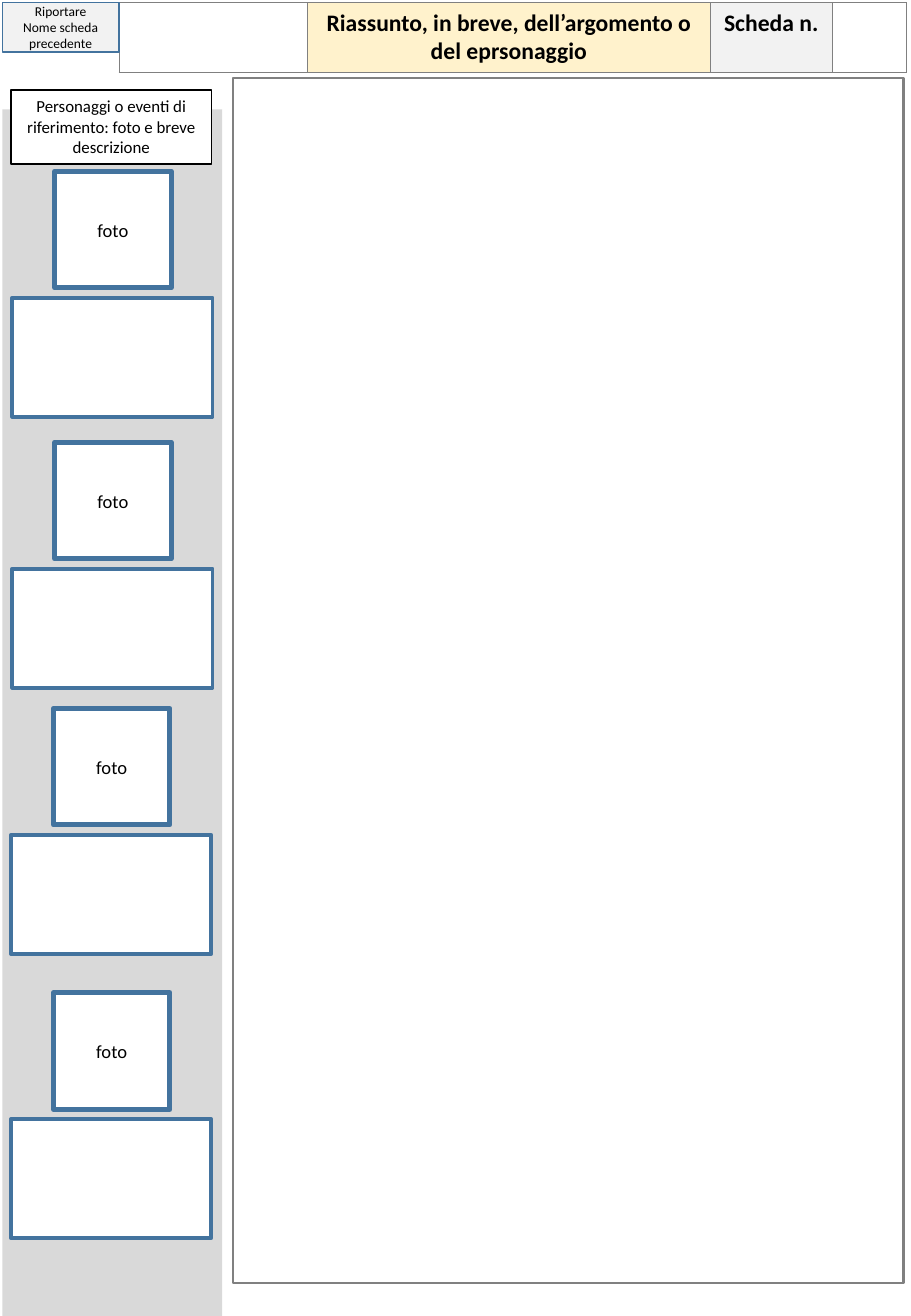
import pptx
import pptx.util
import pptx.dml.color
import pptx.enum.shapes
import pptx.enum.text
import pptx.oxml
import pptx.oxml.ns

Inches = pptx.util.Inches
Pt = pptx.util.Pt
RGBColor = pptx.dml.color.RGBColor
ANCHOR = pptx.enum.text.MSO_ANCHOR

BLACK = RGBColor(0x00, 0x00, 0x00)
WHITE = RGBColor(0xFF, 0xFF, 0xFF)
GREY = RGBColor(0x80, 0x80, 0x80)
SIDEBAR = RGBColor(0xD9, 0xD9, 0xD9)
PALE = RGBColor(0xF2, 0xF2, 0xF2)
CREAM = RGBColor(0xFF, 0xF2, 0xCC)
BLUE = RGBColor(0x43, 0x73, 0x9E)


def write(tf, text, size=11, bold=False, font="Calibri", color=BLACK):
    tf.word_wrap = True
    for i, line in enumerate(text.split("\n")):
        p = tf.paragraphs[0] if i == 0 else tf.add_paragraph()
        p.alignment = pptx.enum.text.PP_ALIGN.CENTER
        r = p.add_run()
        r.text = line
        r.font.name = font
        r.font.size = Pt(size)
        r.font.bold = bold
        r.font.color.rgb = color


class Sheet:
    """Draws the boxes and the header table of one worksheet slide."""

    def __init__(self, prs):
        self.s = prs.slides.add_slide(prs.slide_layouts[6])

    def box(self, x, y, w, h, fill=WHITE, line=BLUE, width=1, text="", size=11, anchor=ANCHOR.MIDDLE):
        sp = self.s.shapes.add_shape(pptx.enum.shapes.MSO_SHAPE.RECTANGLE,
                                     Inches(x), Inches(y), Inches(w), Inches(h))
        sp.shadow.inherit = False
        sp.fill.solid()
        sp.fill.fore_color.rgb = fill
        if line is None:
            sp.line.fill.background()
        else:
            sp.line.color.rgb = line
            sp.line.width = Pt(width)
        if text:
            sp.text_frame.vertical_anchor = anchor
            write(sp.text_frame, text, size=size)

    def border(self, cell, color=GREY, width=0.5):
        tcPr = cell._tc.get_or_add_tcPr()
        for side in "LRTB":
            tcPr.append(pptx.oxml.parse_xml(
                f'<a:ln{side} {pptx.oxml.ns.nsdecls("a")} w="{Pt(width)}"><a:solidFill>'
                f'<a:srgbClr val="{color}"/></a:solidFill></a:ln{side}>'))

    def header(self, x, y, h, columns):
        total = sum(w for w, text, fill in columns)
        table = self.s.shapes.add_table(1, len(columns), Inches(x), Inches(y),
                                        Inches(total), Inches(h)).table
        table.first_row = table.horz_banding = False
        for i, (w, text, fill) in enumerate(columns):
            table.columns[i].width = Inches(w)
            cell = table.cell(0, i)
            self.border(cell)
            if fill is None:
                cell.fill.background()
            else:
                cell.fill.solid()
                cell.fill.fore_color.rgb = fill
            if text:
                write(cell.text_frame, text, size=14, bold=True)

    def person(self, x, y):
        self.box(x + 0.35, y, 0.96, 0.96, width=3, text="foto")
        self.box(x, y + 1.04, 1.65, 0.98, width=2.25)


def main():
    prs = pptx.Presentation()
    prs.slide_width, prs.slide_height = Inches(7.5), Inches(10.83)
    sheet = Sheet(prs)
    sheet.box(1.92, 0.64, 5.52, 9.92, line=GREY, width=1.5)
    sheet.box(0.02, 0.9, 1.81, 9.93, fill=SIDEBAR, line=None)
    sheet.box(0.09, 0.74, 1.65, 0.61, line=BLACK, width=0.75, size=10, anchor=ANCHOR.TOP,
              text="Personaggi o eventi di riferimento: foto e breve descrizione")
    sheet.header(0.98, 0.02, 0.57, [
        (1.55, "", None),
        (3.32, "Riassunto, in breve, dell’argomento o del eprsonaggio", CREAM),
        (1, "Scheda n.", PALE),
        (0.61, "", None),
    ])
    sheet.box(0.02, 0.02, 0.96, 0.41, fill=PALE, size=8,
              text="Riportare\nNome scheda precedente")
    for x, y in [(0.1, 1.41), (0.1, 3.64), (0.09, 5.83), (0.09, 8.17)]:
        sheet.person(x, y)
    prs.save("out.pptx")


if __name__ == "__main__":
    main()
